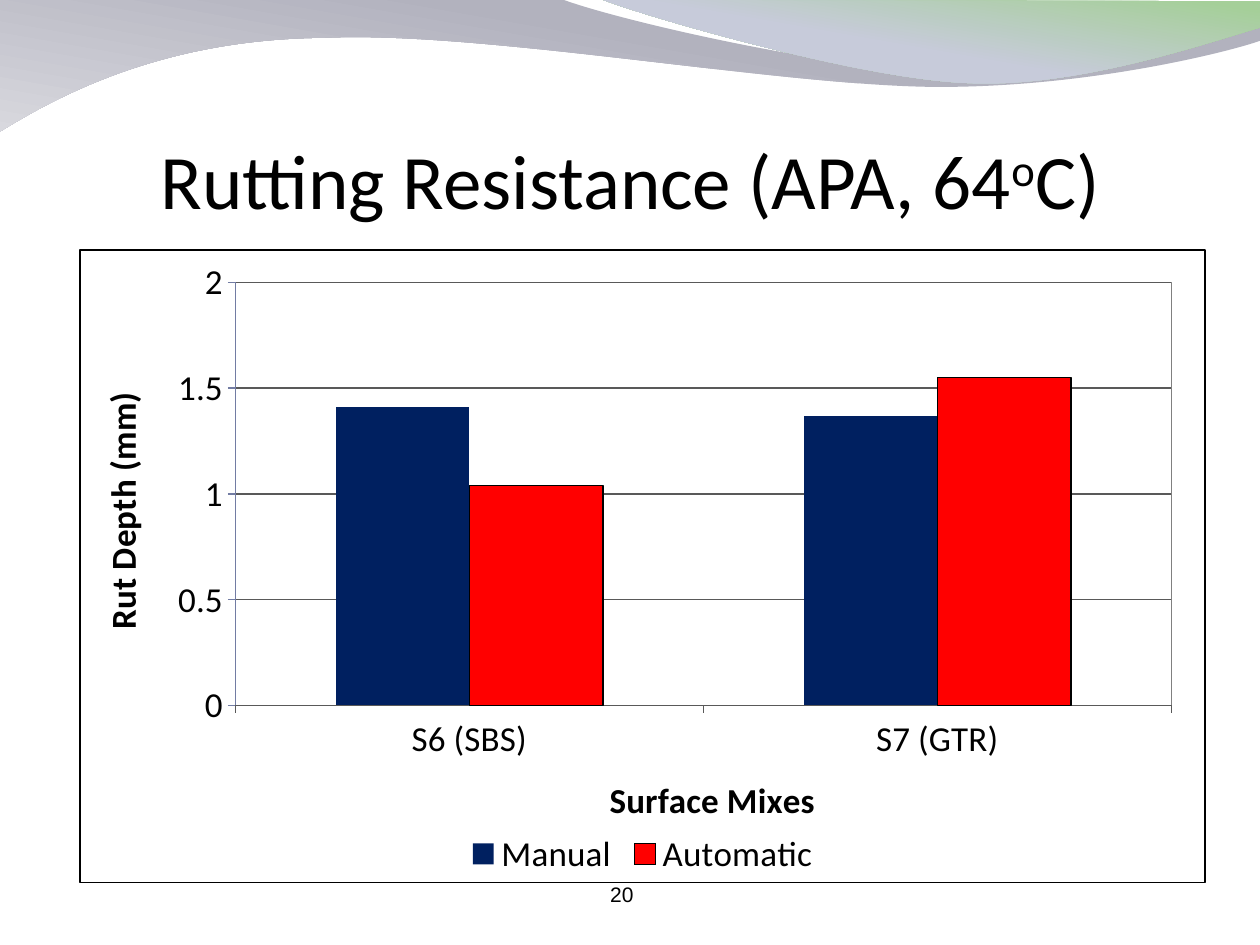
from dataclasses import dataclass

from lxml import etree
from pptx import Presentation
from pptx.chart.data import CategoryChartData
from pptx.dml.color import RGBColor
from pptx.enum.chart import XL_CHART_TYPE as ChartType
from pptx.enum.chart import XL_LEGEND_POSITION as LegendPosition
from pptx.enum.chart import XL_TICK_MARK as TickMark
from pptx.enum.text import MSO_ANCHOR as Anchor
from pptx.enum.text import PP_ALIGN as Align
from pptx.oxml import parse_xml
from pptx.oxml.ns import nsdecls, qn
from pptx.util import Pt

PX = 9144
BLACK = "000000"
GRID = "595959"


@dataclass
class Box:
    left: int
    top: int
    width: int
    height: int

    def emu(self) -> tuple:
        return tuple(v * PX for v in (self.left, self.top, self.width, self.height))


@dataclass
class Wave:
    start: tuple
    segments: list
    stops: list


@dataclass
class Series:
    name: str
    values: tuple
    fill: str
    line: str | None = None


WAVES = [
    Wave(
        (0, -3),
        [
            [(440, -3)],
            [(476, 13), (664, 57), (758, 57)],
            [(853, 57), (958, 22), (1000, 6)],
            [(1001, 32)],
            [(983, 39), (870, 69), (746, 69)],
            [(622, 69), (382, 24), (257, 30)],
            [(129, 31), (46, 76), (-1, 105)],
        ],
        [(0.41, "B2B2BE"), (1, "D8D8DE")],
    ),
    Wave(
        (479, 0),
        [
            [(509, 12), (682, 63), (769, 66)],
            [(856, 70), (961, 33), (1000, 22)],
            [(1000, 1)],
        ],
        [(0.05, "A5CF99"), (0.54, "C7CBDA")],
    ),
]
SERIES = [
    Series("Manual", (1.41, 1.37), "002060"),
    Series("Automatic", (1.04, 1.55), "FF0000", BLACK),
]
CATEGORIES = ("S6 (SBS)", "S7 (GTR)")


def color(value: str) -> RGBColor:
    return RGBColor.from_string(value)


def set_font(font, name: str, size: int, bold: bool = False) -> None:
    font.name, font.size, font.bold = name, Pt(size), bold
    font.color.rgb = color(BLACK)


def set_line(line, value: str) -> None:
    line.color.rgb = color(value)
    line.width = Pt(0.75)


def bend(shape, segments: list) -> None:
    lines = iter(list(shape.element.iter(qn("a:lnTo"))))
    for segment in segments:
        parts = [next(lines) for _ in segment]
        if len(parts) == 3:
            cubic = etree.Element(qn("a:cubicBezTo"))
            parts[0].addprevious(cubic)
            for part in parts:
                cubic.append(part[0])
                part.getparent().remove(part)


def draw_wave(page, wave: Wave) -> None:
    points = [wave.start] + [point for segment in wave.segments for point in segment]
    builder = page.shapes.build_freeform(*points[0], scale=PX)
    builder.add_line_segments(points[1:], close=True)
    shape = builder.convert_to_shape()
    bend(shape, wave.segments)
    shape.shadow.inherit = False
    shape.line.fill.background()
    shape.fill.gradient()
    shape.fill.gradient_angle = 260
    for stop, (position, value) in zip(shape.fill.gradient_stops, wave.stops):
        stop.position = position
        stop.color.rgb = color(value)


def draw_text(page, box: Box, texts: list, font: str, size: int, anchor: Anchor):
    frame = page.shapes.add_textbox(*box.emu()).text_frame
    frame.word_wrap = True
    frame.vertical_anchor = anchor
    para = frame.paragraphs[0]
    para.alignment = Align.CENTER
    set_font(para.font, font, size)
    for text in texts:
        para.add_run().text = text
    return frame


def outline(value: str):
    return parse_xml(
        f'<c:spPr {nsdecls("c", "a")}><a:noFill/><a:ln w="9525"><a:solidFill>'
        f'<a:srgbClr val="{value}"/></a:solidFill></a:ln></c:spPr>'
    )


def manual_layout(**settings):
    layout = parse_xml(f'<c:layout {nsdecls("c")}><c:manualLayout/></c:layout>')
    for tag, value in settings.items():
        etree.SubElement(layout[0], qn(f"c:{tag}")).set("val", str(value))
    return layout


def remove_layout(parent) -> None:
    for old in parent.findall(qn("c:layout")):
        parent.remove(old)


def place_parts(chart) -> None:
    area = chart.element.find(qn("c:chart")).find(qn("c:plotArea"))
    remove_layout(area)
    area.insert(0, manual_layout(layoutTarget="inner", xMode="edge", yMode="edge",
                                 x=0.138, y=0.051, w=0.832, h=0.669))
    area.append(outline("808080"))
    title = chart.category_axis.axis_title._element
    remove_layout(title)
    title.find(qn("c:tx")).addnext(manual_layout(xMode="edge", yMode="edge", x=0.465, y=0.82))
    chart.element.find(qn("c:chart")).addnext(outline(BLACK))


def style_axis(axis, title: str, line: str) -> None:
    axis.major_tick_mark = TickMark.OUTSIDE
    axis.minor_tick_mark = TickMark.NONE
    set_line(axis.format.line, line)
    set_font(axis.tick_labels.font, "Calibri", 20)
    para = axis.axis_title.text_frame.paragraphs[0]
    para.add_run().text = title
    set_font(para.font, "Calibri", 20, bold=True)


def draw_chart(page, box: Box) -> None:
    data = CategoryChartData()
    data.categories = CATEGORIES
    for item in SERIES:
        data.add_series(item.name, item.values)
    chart = page.shapes.add_chart(ChartType.COLUMN_CLUSTERED, *box.emu(), data).chart
    set_font(chart.font, "Calibri", 20)
    chart.has_title = False
    chart.has_legend = True
    chart.legend.position = LegendPosition.BOTTOM
    chart.legend.include_in_layout = False
    set_font(chart.legend.font, "Calibri", 20)

    style_axis(chart.category_axis, "Surface Mixes", GRID)
    depth = chart.value_axis
    style_axis(depth, "Rut Depth (mm)", "727CA3")
    depth.minimum_scale, depth.maximum_scale, depth.major_unit = 0, 2, 0.5
    depth.has_major_gridlines = True
    set_line(depth.major_gridlines.format.line, GRID)

    plot = chart.plots[0]
    plot.gap_width, plot.overlap, plot.vary_by_categories = 150, 0, False
    for series, item in zip(plot.series, SERIES):
        series.format.fill.solid()
        series.format.fill.fore_color.rgb = color(item.fill)
        if item.line:
            set_line(series.format.line, item.line)
        else:
            series.format.line.fill.background()
    place_parts(chart)


def main() -> None:
    deck = Presentation()
    deck.slide_width, deck.slide_height = 1000 * PX, 750 * PX
    page = deck.slides.add_slide(deck.slide_layouts[6])
    for wave in WAVES:
        draw_wave(page, wave)
    draw_text(page, Box(452, 695, 83, 40), ["20"], "Arial", 12, Anchor.TOP)
    title = draw_text(page, Box(50, 77, 900, 125),
                      ["Rutting Resistance (APA, 64", "o", "C)"], "Calibri", 44, Anchor.MIDDLE)
    title.margin_left = title.margin_right = title.margin_bottom = 0
    degree = title.paragraphs[0].runs[1]
    degree.font._element.set("baseline", "30000")
    draw_chart(page, Box(63, 198, 894, 503))
    deck.save("out.pptx")


if __name__ == "__main__":
    main()
